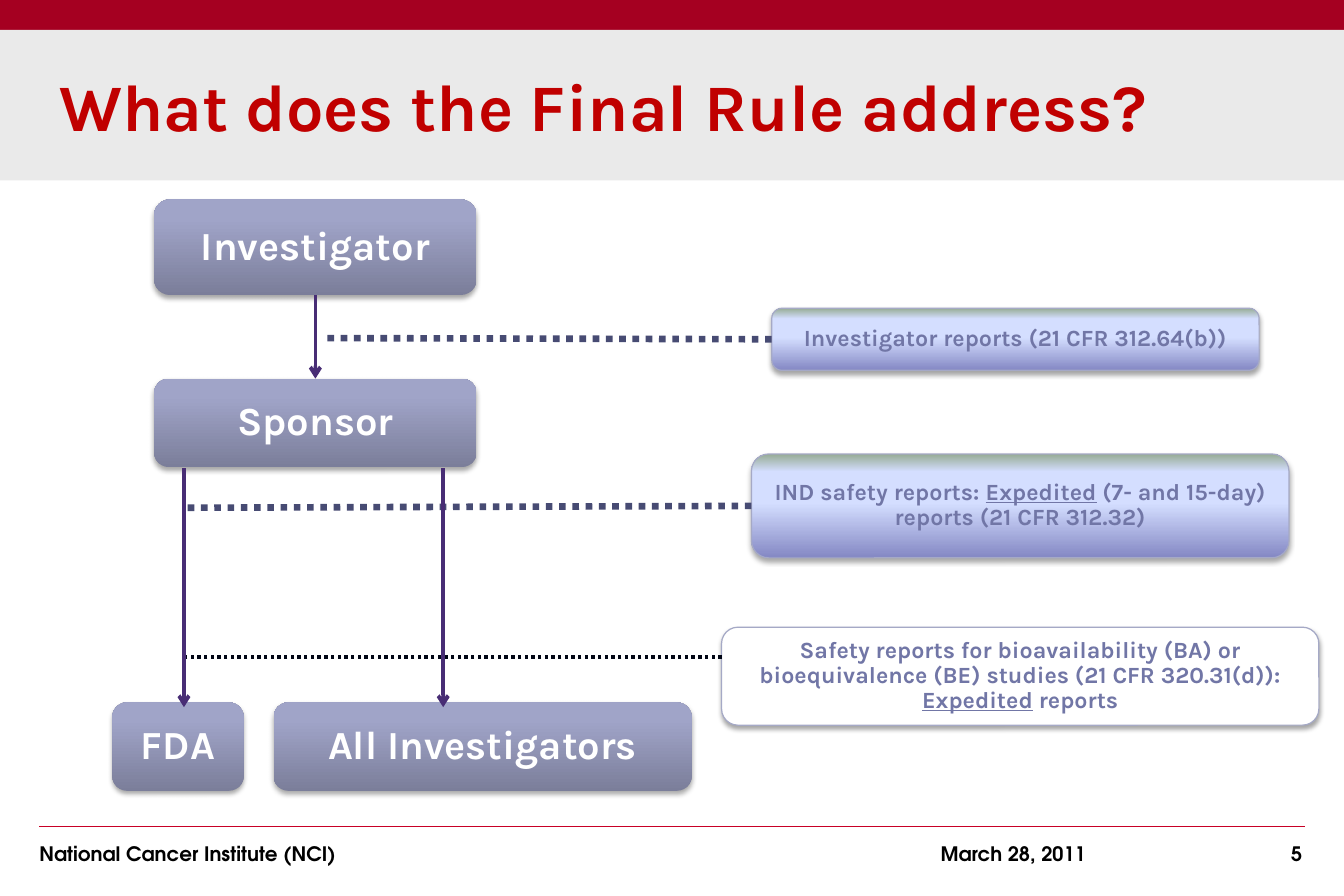
from pptx import Presentation
from pptx import util as u
from pptx.dml.color import RGBColor
from pptx.enum import dml, shapes, text
from pptx.oxml import parse_xml
from pptx.oxml.ns import nsdecls, qn

BODY_FONT, FOOTER_FONT = "Karla", "TeX Gyre Adventor"
ROLE_STOPS = [(0, "7B7E9A"), (80, "A0A4C8"), (100, "A0A4CA")]
REPORT_STOPS = [(0, "8488C4"), (53, "D4DEFF"), (83, "D4DEFF"), (100, "96AB94")]
ARROW, DOTS, FINE_DOTS = "482D75", "474B73", "000514"


def color(value):
    return RGBColor.from_string(value)


class SlideBuilder:
    def __init__(self, deck):
        self.slide = deck.slides.add_slide(deck.slide_layouts[6])

    def label(self, shape, spans, size, hue, font=BODY_FONT, align="CENTER",
              anchor="MIDDLE", margins=(0.1, 0.1), spacing=None):
        """Fill a shape with one paragraph of (wording, underlined) spans."""
        frame = shape.text_frame
        frame.word_wrap = True
        frame.vertical_anchor = text.MSO_ANCHOR[anchor]
        frame.margin_left, frame.margin_right = map(u.Inches, margins)
        para = frame.paragraphs[0]
        para.alignment = text.PP_ALIGN[align]
        para.line_spacing = spacing
        for wording, underlined in spans:
            span = para.add_run()
            span.text = wording
            span.font.name = font
            span.font.size = u.Pt(size)
            span.font.bold = True
            span.font.color.rgb = color(hue)
            if underlined:
                span.font.underline = True

    def shape(self, kind, place, fill=None, outline=None):
        shape = self.slide.shapes.add_shape(
            shapes.MSO_SHAPE[kind], *map(u.Inches, place))
        shape.shadow.inherit = False
        if fill:
            shape.fill.solid()
            shape.fill.fore_color.rgb = color(fill)
        if outline:
            shape.line.color.rgb = color(outline)
            shape.line.width = u.Pt(0.75)
        else:
            shape.line.fill.background()
        return shape

    def gradient(self, shape, stops):
        """Run the stops from the bottom of the shape to its top."""
        shape.fill.gradient()
        shape.fill.gradient_angle = 90
        stop_list = shape.element.spPr.find(".//" + qn("a:gsLst"))
        for old_stop in list(stop_list):
            stop_list.remove(old_stop)
        for percent, hue in stops:
            stop_list.append(parse_xml(
                f'<a:gs {nsdecls("a")} pos="{percent * 1000}">'
                f'<a:srgbClr val="{hue}"/></a:gs>'))

    def card(self, place, spans, size, hue, stops=None, outline=None):
        """Add a rounded box with a soft shadow; white if it has no stops."""
        box = self.shape("ROUNDED_RECTANGLE", place, "FFFFFF", outline)
        if stops:
            self.gradient(box, stops)
        box.element.spPr.find(qn("a:effectLst")).append(parse_xml(
            f'<a:outerShdw {nsdecls("a")} blurRad="{u.Pt(3.1)}" '
            f'dist="{u.Pt(1.8)}" dir="5400000" rotWithShape="0">'
            '<a:srgbClr val="000000"><a:alpha val="35000"/></a:srgbClr>'
            '</a:outerShdw>'))
        self.label(box, spans, size, hue, spacing=0.9)
        return box

    def role(self, place, name):
        return self.card(place, [(name, False)], 24, "FFFFFF", ROLE_STOPS)

    def report(self, place, spans, stops=None):
        return self.card(place, spans, 14, "7176A6", stops, "A5A9C6")

    def line(self, start, end, hue, width, dotted=False, arrow=False):
        line = self.slide.shapes.add_connector(
            shapes.MSO_CONNECTOR.STRAIGHT, *map(u.Inches, start + end))
        line.line.color.rgb = color(hue)
        line.line.width = u.Pt(width)
        if dotted:
            line.line.dash_style = dml.MSO_LINE.ROUND_DOT
            line.element.spPr.find(".//" + qn("a:prstDash")).set("val", "sysDot")
        if arrow:
            line.element.spPr.find(qn("a:ln")).append(
                parse_xml(f'<a:tailEnd {nsdecls("a")} type="arrow"/>'))
        line.element.spPr.append(parse_xml(f'<a:effectLst {nsdecls("a")}/>'))
        return line

    def footer(self, left, width, wording, align="LEFT"):
        box = self.slide.shapes.add_textbox(
            *map(u.Inches, (left, 7, width, 0.3)))
        self.label(box, [(wording, False)], 12, "000000", FOOTER_FONT,
                   align, "TOP", (0, 0))


def main():
    deck = Presentation()
    deck.slide_width, deck.slide_height = u.Inches(11.25), u.Inches(7.5)
    page = SlideBuilder(deck)

    page.shape("RECTANGLE", (0, 0, 11.25, 0.25), "A50021")
    title = page.shape("RECTANGLE", (0, 0.25, 11.25, 1.26), "EAEAEA")
    page.label(title, [("What does the Final Rule address?", False)], 40,
               "C00000", align="LEFT", margins=(0.5, 0.1))

    page.line((0.33, 6.92), (10.92, 6.92), "C80026", 1)
    page.footer(0.33, 4, "National Cancer Institute (NCI)")
    page.footer(7.09, 2, "March 28, 2011", "RIGHT")
    page.footer(9.9, 1, "5", "RIGHT")

    investigator = page.role((1.29, 1.67, 2.7, 0.8), "Investigator")
    sponsor = page.role((1.29, 3.17, 2.7, 0.74), "Sponsor")
    page.role((0.94, 5.88, 1.1, 0.74), "FDA")
    page.role((2.29, 5.88, 3.5, 0.74), "All Investigators")

    investigator_reports = page.report(
        (6.46, 2.58, 4.08, 0.52),
        [("Investigator reports (21 CFR 312.64(b))", False)], REPORT_STOPS)
    safety_reports = page.report(
        (6.29, 3.8, 4.5, 0.87),
        [("IND safety reports: ", False), ("Expedited", True),
         (" (7- and 15-day) reports (21 CFR 312.32)", False)], REPORT_STOPS)
    page.report(
        (6.04, 5.25, 5, 0.82),
        [("Safety reports for bioavailability (BA) or bioequivalence (BE) "
          "studies (21 CFR 320.31(d)): ", False),
         ("Expedited", True), (" reports", False)])

    handover = page.line((2.64, 2.47), (2.64, 3.17), ARROW, 2.25, arrow=True)
    handover.begin_connect(investigator, 2)
    handover.end_connect(sponsor, 0)

    for box, start, end in ((investigator_reports, (6.46, 2.84), (2.71, 2.83)),
                            (safety_reports, (6.29, 4.24), (1.54, 4.25))):
        page.line(start, end, DOTS, 4, dotted=True).begin_connect(box, 1)
    page.line((6.04, 5.5), (1.54, 5.5), FINE_DOTS, 2, dotted=True)

    for x in (1.54, 3.71):
        page.line((x, 3.92), (x, 5.92), ARROW, 2.25, arrow=True)

    deck.save("out.pptx")


if __name__ == "__main__":
    main()
